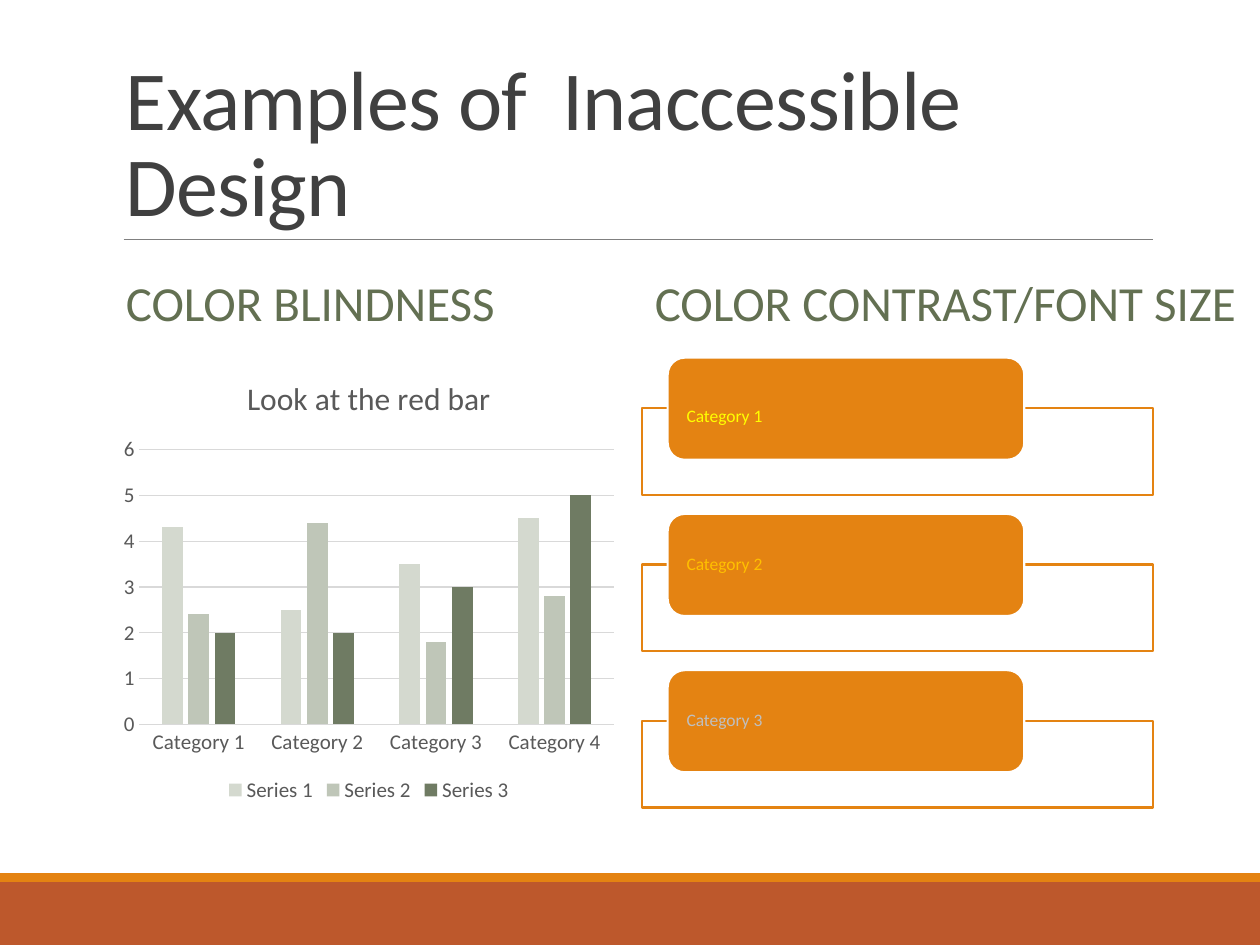
"""Build a slide on inaccessible design with a chart and low-contrast labels."""
from pptx import Presentation
from pptx import util as u
from pptx.chart import data
from pptx.dml.color import RGBColor
from pptx.enum import chart as ch, shapes, text
from pptx.oxml import parse_xml
from pptx.oxml.ns import nsdecls, qn

HUES = {
    "rust": "BD582C", "orange": "E48312", "white": "FFFFFF", "rule": "808080",
    "title": "404040", "label": "637052", "axis": "595959", "grid": "D9D9D9",
    "yellow": "FFFF00", "gold": "FFC000", "silver": "BFBFBF",
    "pale": "D4D9CF", "sage": "BFC6B8", "moss": "6F7B63",
}


class Deck:
    """Hold the style and the current slide."""

    def __init__(self, wide, high, face):
        self.prs = Presentation()
        self.prs.slide_width, self.prs.slide_height = u.Cm(wide), u.Cm(high)
        self.slide = self.prs.slides.add_slide(self.prs.slide_layouts[6])
        self.face = face

    def hue(self, name):
        return RGBColor.from_string(HUES[name])

    def font(self, font, size, hue):
        font.name, font.size = self.face, u.Pt(size)
        font.bold = False
        font.color.rgb = self.hue(hue)

    def shape(self, kind, box, fill, line=None, alpha=None):
        item = self.slide.shapes.add_shape(kind, *map(u.Cm, box))
        item.shadow.inherit = False
        item.fill.solid()
        item.fill.fore_color.rgb = self.hue(fill)
        if alpha:
            tint = item.fill._xPr.find(".//" + qn("a:srgbClr"))
            tint.append(parse_xml(f'<a:alpha {nsdecls("a")} val="{alpha * 1000}"/>'))
        if line:
            item.line.color.rgb = self.hue(line)
            item.line.width = u.Pt(1.25)
        else:
            item.line.fill.background()
        return item

    def rule(self, left, right, top, hue):
        line = self.slide.shapes.add_connector(
            shapes.MSO_CONNECTOR.STRAIGHT, *map(u.Cm, (left, top, right, top)))
        line.line.color.rgb = self.hue(hue)
        line.line.width = u.Pt(0.5)
        line._element.spPr.append(parse_xml(f'<a:effectLst {nsdecls("a")}/>'))

    def fill(self, item, words, size, hue, space=0.9):
        frame = item.text_frame
        frame.word_wrap = True
        frame.vertical_anchor = text.MSO_ANCHOR.MIDDLE
        frame.text = words
        para = frame.paragraphs[0]
        para.alignment = text.PP_ALIGN.LEFT
        para.line_spacing = space
        self.font(para.runs[0].font, size, hue)
        return para

    def text(self, box, words, size, hue, space=0.9):
        item = self.slide.shapes.add_textbox(*map(u.Cm, box))
        self.fill(item, words, size, hue, space)
        return item

    def title(self, box, words):
        item = self.text(box, words, 48, "title", 0.85)
        item.text_frame.vertical_anchor = text.MSO_ANCHOR.BOTTOM
        item.text_frame.paragraphs[0].runs[0].font._element.set("spc", "-50")

    def label(self, box, words):
        para = self.text(box, words, 28, "label").text_frame.paragraphs[0]
        para.space_before, para.space_after = u.Pt(12), u.Pt(2)

    def card(self, top, words, hue):
        self.shape(shapes.MSO_SHAPE.RECTANGLE, (12.95, top + 1.02, 10.29, 1.75),
                   "white", "orange", 90)
        pill = self.shape(shapes.MSO_SHAPE.ROUNDED_RECTANGLE,
                          (13.46, top, 7.19, 2.06), "orange", "white")
        frame = pill.text_frame
        frame.margin_left = frame.margin_right = u.Cm(0.28)
        frame.margin_top = frame.margin_bottom = 0
        return self.fill(pill, words, 10, hue)

    def chart(self, box, title, cats, series):
        pack = data.CategoryChartData()
        pack.categories = cats
        for name, vals, _ in series:
            pack.add_series(name, vals)
        chart = self.slide.shapes.add_chart(
            ch.XL_CHART_TYPE.COLUMN_CLUSTERED, *map(u.Cm, box), pack).chart
        self.font(chart.font, 12, "axis")
        chart.has_title = True
        chart.chart_title.text_frame.text = title
        self.font(chart.chart_title.text_frame.paragraphs[0].runs[0].font, 18, "axis")
        chart.has_legend = True
        chart.legend.position = ch.XL_LEGEND_POSITION.BOTTOM
        chart.legend.include_in_layout = False
        self.font(chart.legend.font, 12, "axis")
        for axis in (chart.category_axis, chart.value_axis):
            axis.major_tick_mark = axis.minor_tick_mark = ch.XL_TICK_MARK.NONE
            self.font(axis.tick_labels.font, 12, "axis")
        chart.value_axis.format.line.fill.background()
        for line in (chart.category_axis.format.line,
                     chart.value_axis.major_gridlines.format.line):
            line.color.rgb = self.hue("grid")
            line.width = u.Pt(0.75)
        plot = chart.plots[0]
        plot.vary_by_categories = False
        plot.gap_width, plot.overlap = 219, -27
        for bar, (_, _, hue) in zip(plot.series, series):
            bar.format.fill.solid()
            bar.format.fill.fore_color.rgb = self.hue(hue)


def main():
    deck = Deck(25.4, 19.05, "Calibri")
    rect = shapes.MSO_SHAPE.RECTANGLE
    deck.shape(rect, (0, 17.78, 25.4, 1.27), "rust")
    deck.shape(rect, (0, 17.6, 25.4, 0.18), "orange")
    deck.rule(2.49, 23.24, 4.83, "rule")
    deck.title((2.29, 0.79, 20.95, 4.04), "Examples of  Inaccessible Design")
    deck.label((2.29, 5.13, 10.29, 2.06), "COLOR BLINDNESS")
    deck.chart((2.29, 7.16, 10.29, 9.12), "Look at the red bar",
               [f"Category {n}" for n in range(1, 5)],
               [("Series 1", (4.3, 2.5, 3.5, 4.5), "pale"),
                ("Series 2", (2.4, 4.4, 1.8, 2.8), "sage"),
                ("Series 3", (2, 2, 3, 5), "moss")])
    deck.label((12.95, 5.13, 12.45, 2.06), "COLOR CONTRAST/FONT SIZE")
    cards = [deck.card(7.21 + 3.15 * n, f"Category {n + 1}", hue)
             for n, hue in enumerate(("yellow", "gold", "silver"))]
    tab = cards[0].add_run()
    tab.text = "\t"
    deck.font(tab.font, 25, "white")
    deck.prs.save("out.pptx")


if __name__ == "__main__":
    main()
